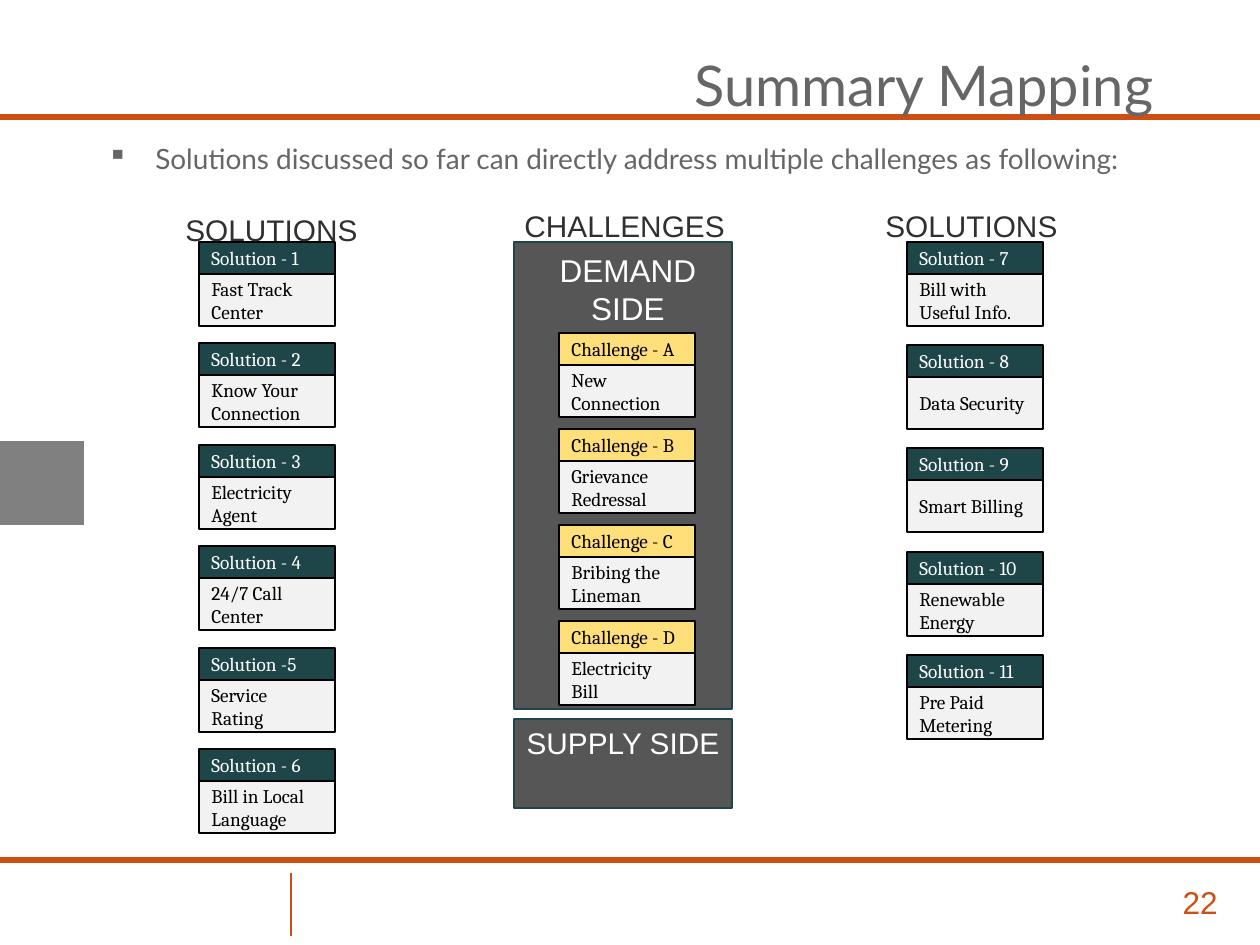
"""Build the Summary Mapping slide: solutions on both sides of the challenges."""
from lxml.etree import SubElement as Sub
from pptx import Presentation
from pptx.dml.color import RGBColor as Rgb
from pptx.enum.shapes import MSO_CONNECTOR as Conn, MSO_SHAPE as Kind
from pptx.enum.text import MSO_ANCHOR as Anchor, PP_ALIGN as Align
from pptx.oxml.ns import qn
from pptx.util import Emu, Pt

INK = {
    "rust": "CE4E14", "grey": "808080", "text": "666666", "teal": "1E4649",
    "pale": "F2F2F2", "gold": "FFDF79", "dark": "565656", "head": "303030",
    "black": "000000", "white": "FFFFFF",
}
CARD_W, TOP_H, BODY_H = 136, 32, 52
LEFT = [
    ("Solution - 1", "Fast Track Center"),
    ("Solution - 2", "Know Your Connection"),
    ("Solution - 3", "Electricity Agent"),
    ("Solution - 4", "24/7 Call Center"),
    ("Solution -5", "Service Rating"),
    ("Solution - 6", "Bill in Local Language"),
]
MID = [
    ("Challenge - A", "New Connection"),
    ("Challenge - B", "Grievance Redressal"),
    ("Challenge - C", "Bribing the Lineman"),
    ("Challenge - D", "Electricity Bill"),
]
RIGHT = [
    ("Solution - 7", "Bill with Useful Info."),
    ("Solution - 8", "Data Security"),
    ("Solution - 9", "Smart Billing"),
    ("Solution - 10", "Renewable Energy"),
    ("Solution - 11", "Pre Paid Metering"),
]


def px(*vals):
    return [Emu(round(v * 914400 / 126)) for v in vals]


def tint(name):
    return Rgb.from_string(INK[name])


def write(shape, text, size, face, ink, align=Align.LEFT, anchor=Anchor.MIDDLE, mark=None):
    frame = shape.text_frame
    for key, val in {"word_wrap": True, "vertical_anchor": anchor, "text": text}.items():
        setattr(frame, key, val)
    for para in frame.paragraphs:
        para.alignment = align
        if mark:
            props = para._p.get_or_add_pPr()
            dent = px(48)[0]
            props.set("marL", str(dent))
            props.set("indent", str(-dent))
            Sub(props, qn("a:buChar"), char=mark)
        for run in para.runs:
            for key, val in {"size": Pt(size), "name": face}.items():
                setattr(run.font, key, val)
            run.font.color.rgb = tint(ink)


def label(slide, box, *args, **opts):
    write(slide.shapes.add_textbox(*px(*box)), *args, **opts)


def block(shapes, box, fill, edge=None):
    shape = shapes.add_shape(Kind.RECTANGLE, *px(*box))
    shape.shadow.inherit = False
    shape.fill.solid()
    shape.fill.fore_color.rgb = tint(fill)
    if edge:
        shape.line.color.rgb = tint(edge)
        shape.line.width = Pt(0.75)
    else:
        shape.line.fill.background()
    return shape


def rule(slide, ends, width):
    line = slide.shapes.add_connector(Conn.STRAIGHT, *px(*ends))
    line.line.color.rgb = tint("rust")
    line.line.width = Pt(width)
    Sub(line._element.spPr, qn("a:effectLst"))


def card(slide, x, y, head, body, fill, ink):
    shapes = slide.shapes.add_group_shape().shapes
    top = block(shapes, (x, y, CARD_W, TOP_H), fill, "black")
    write(top, head, 11, "Cambria", ink)
    base = block(shapes, (x, y + TOP_H, CARD_W, BODY_H), "pale", "black")
    write(base, body, 11, "Cambria", "black")


def stack(slide, x, first, last, cards, fill, ink):
    step = (last - first) / (len(cards) - 1)
    for i, (head, body) in enumerate(cards):
        card(slide, x, round(first + i * step), head, body, fill, ink)


def frame(slide):
    block(slide.shapes, (0, 441, 84, 84), "grey")
    for y in (860, 117):
        rule(slide, (0, y, 1260, y), 3)
    rule(slide, (291, 936, 291, 873), 0.75)
    label(slide, (1165, 877, 70, 50), "22", 18, "Arial", "rust",
          Align.CENTER, Anchor.TOP)
    label(slide, (105, 42, 1061, 84), "Summary Mapping", 32, "Lato", "text", Align.RIGHT)
    label(slide, (95, 135, 1061, 57),
          "Solutions discussed so far can directly address multiple challenges as following:",
          16, "Lato", "text", anchor=Anchor.TOP, mark="▪")


def main():
    deck = Presentation()
    deck.slide_width, deck.slide_height = px(1260, 945)
    slide = deck.slides.add_slide(deck.slide_layouts[6])
    frame(slide)
    stack(slide, 199, 242, 749, LEFT, "teal", "white")
    stack(slide, 907, 242, 655, RIGHT, "teal", "white")
    block(slide.shapes, (514, 242, 218, 467), "dark", "teal")
    stack(slide, 559, 333, 621, MID, "gold", "black")
    label(slide, (432, 245, 392, 48), "DEMAND\nSIDE", 18, "Arial", "white",
          Align.CENTER, Anchor.TOP)
    supply = block(slide.shapes, (514, 719, 218, 89), "dark", "teal")
    write(supply, "SUPPLY SIDE", 17, "Arial", "white", Align.CENTER, Anchor.TOP)
    for x, y, text, align in (
        (512, 203, "CHALLENGES", Align.LEFT),
        (147, 207, "SOLUTIONS", Align.CENTER),
        (847, 203, "SOLUTIONS", Align.CENTER),
    ):
        label(slide, (x, y, 249, 45), text, 17, "Arial", "head", align)
    deck.save("out.pptx")


if __name__ == "__main__":
    main()
